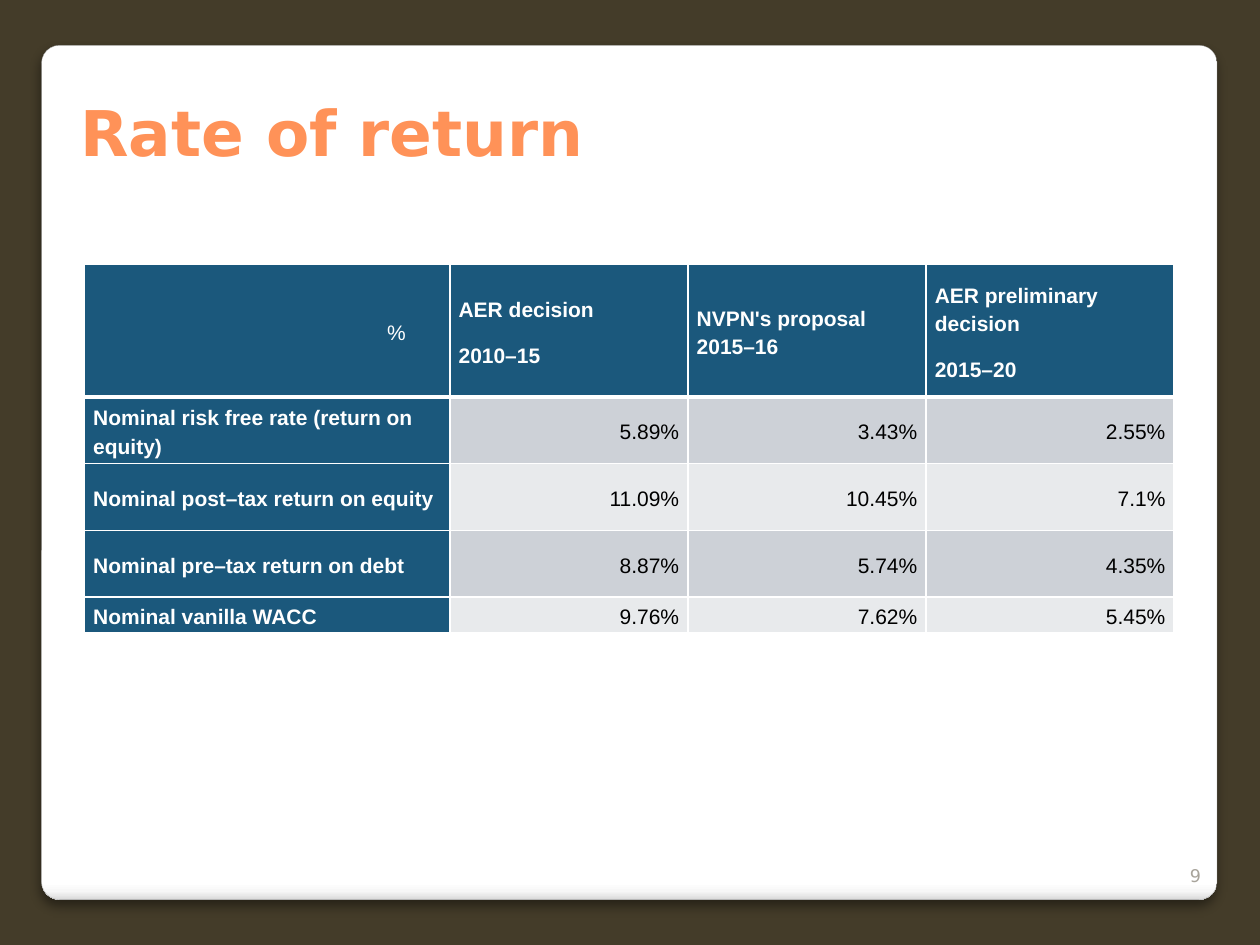
from lxml.etree import SubElement
from pptx import Presentation
from pptx.dml.color import RGBColor
from pptx.enum.shapes import MSO_SHAPE
from pptx.enum.text import MSO_ANCHOR, PP_ALIGN
from pptx.oxml.ns import qn
from pptx.util import Inches, Pt

HEADS = ["%", "AER decision\n2010–15", "NVPN's proposal 2015–16",
         "AER preliminary decision\n2015–20"]
ROWS = [
    ["Nominal risk free rate (return on equity)", "5.89%", "3.43%", "2.55%"],
    ["Nominal post–tax return on equity", "11.09%", "10.45%", "7.1%"],
    ["Nominal pre–tax return on debt", "8.87%", "5.74%", "4.35%"],
    ["Nominal vanilla WACC", "9.76%", "7.62%", "5.45%"],
]
WIDTHS = [2.9, 1.89, 1.89, 1.97]
HEIGHTS = [1.05, 0.53, 0.53, 0.53, 0.28]


def color(code):
    return RGBColor.from_string(code)


def node(up, tag, **attrs):
    return SubElement(up, qn(tag), {k: str(v) for k, v in attrs.items()})


def write(frame, text, font="Arial", size=12, ink="000000", bold=False,
          align=PP_ALIGN.LEFT, space=None, before=0, after=0):
    for i, line in enumerate(text.split("\n")):
        para = frame.add_paragraph() if i else frame.paragraphs[0]
        para.alignment = align
        para.line_spacing = space
        para.space_before, para.space_after = Pt(before), Pt(after)
        run = para.add_run()
        run.text = line
        run.font.name, run.font.size, run.font.bold = font, Pt(size), bold
        run.font.color.rgb = color(ink)


class Deck:
    """Holds the style and the current slide."""

    face = "DejaVu Sans"
    blue, white = "1B587C", "FFFFFF"
    bands = ["CDD1D7", "E8EAEC"]

    def __init__(self, show, back):
        self.slide = show.slides.add_slide(show.slide_layouts[6])
        fill = self.slide.background.fill
        fill.solid()
        fill.fore_color.rgb = color(back)

    def card(self, box, stops):
        shape = self.slide.shapes.add_shape(
            MSO_SHAPE.ROUNDED_RECTANGLE, *map(Inches, box))
        shape.adjustments[0] = 0.021
        shape.line.color.rgb = color("A4A4A4")
        shape.line.width = Pt(0.16)
        shape.fill.gradient()
        shape.fill.gradient_angle = 270
        ramp = shape.element.spPr.find(".//" + qn("a:gsLst"))
        ramp.clear()
        for pos, code in stops:
            node(node(ramp, "a:gs", pos=pos * 1000), "a:srgbClr", val=code)
        shape.shadow.inherit = False
        glow = node(shape.element.spPr.find(qn("a:effectLst")), "a:outerShdw",
                    blurRad=Pt(6), dist=Pt(4), dir=5400000)
        node(node(glow, "a:srgbClr", val="000000"), "a:alpha", val=44000)

    def text(self, box, text, **style):
        frame = self.slide.shapes.add_textbox(*map(Inches, box)).text_frame
        frame.word_wrap = True
        frame.vertical_anchor = MSO_ANCHOR.BOTTOM
        write(frame, text, font=self.face, **style)

    def cell(self, cell, text, row, col):
        cell.vertical_anchor = MSO_ANCHOR.MIDDLE
        cell.margin_left = cell.margin_right = Inches(0.07)
        cell.margin_top = cell.margin_bottom = 0
        unit = row == col == 0
        label = row == 0 or col == 0
        if unit:
            cell.margin_right = Inches(0.35)
        props = cell._tc.get_or_add_tcPr()
        for side in "LRTB":
            thick = (row, side) in [(0, "B"), (1, "T")]
            edge = node(props, f"a:ln{side}", w=Pt(3 if thick else 1))
            node(node(edge, "a:solidFill"), "a:srgbClr", val=self.white)
        cell.fill.solid()
        cell.fill.fore_color.rgb = color(
            self.blue if label else self.bands[(row - 1) % 2])
        side = row > 0 and col == 0
        write(cell.text_frame, text, ink=self.white if label else "000000",
              bold=label and not unit, space=1.2,
              align=PP_ALIGN.LEFT if label and not unit else PP_ALIGN.RIGHT,
              before=4 if side else 6, after=6 if side else 4)

    def table(self, left, top, data, widths, heights):
        box = map(Inches, (left, top, sum(widths), sum(heights)))
        grid = self.slide.shapes.add_table(len(data), len(widths), *box).table
        grid.first_row = grid.horz_banding = False
        for col, width in zip(grid.columns, widths):
            col.width = Inches(width)
        for row, height in zip(grid.rows, heights):
            row.height = Inches(height)
        for r, line in enumerate(data):
            for c, text in enumerate(line):
                self.cell(grid.cell(r, c), text, r, c)


def main():
    show = Presentation()
    show.slide_width, show.slide_height = Inches(10), Inches(7.5)
    deck = Deck(show, "443C29")
    deck.card((0.33, 0.36, 9.33, 6.78),
              [(0, "FFFFFF"), (98, "FFFFFF"), (99, "F7F7F7"), (100, "DADADA")])
    deck.text((9.13, 6.68, 0.5, 0.4), "9", size=10, ink="A8A49B",
              align=PP_ALIGN.RIGHT)
    deck.text((0.54, 0.6, 8.95, 0.79), "Rate of return", size=36,
              ink="FF9258", bold=True)
    deck.table(0.67, 2.1, [HEADS] + ROWS, WIDTHS, HEIGHTS)
    show.save("out.pptx")


if __name__ == "__main__":
    main()
